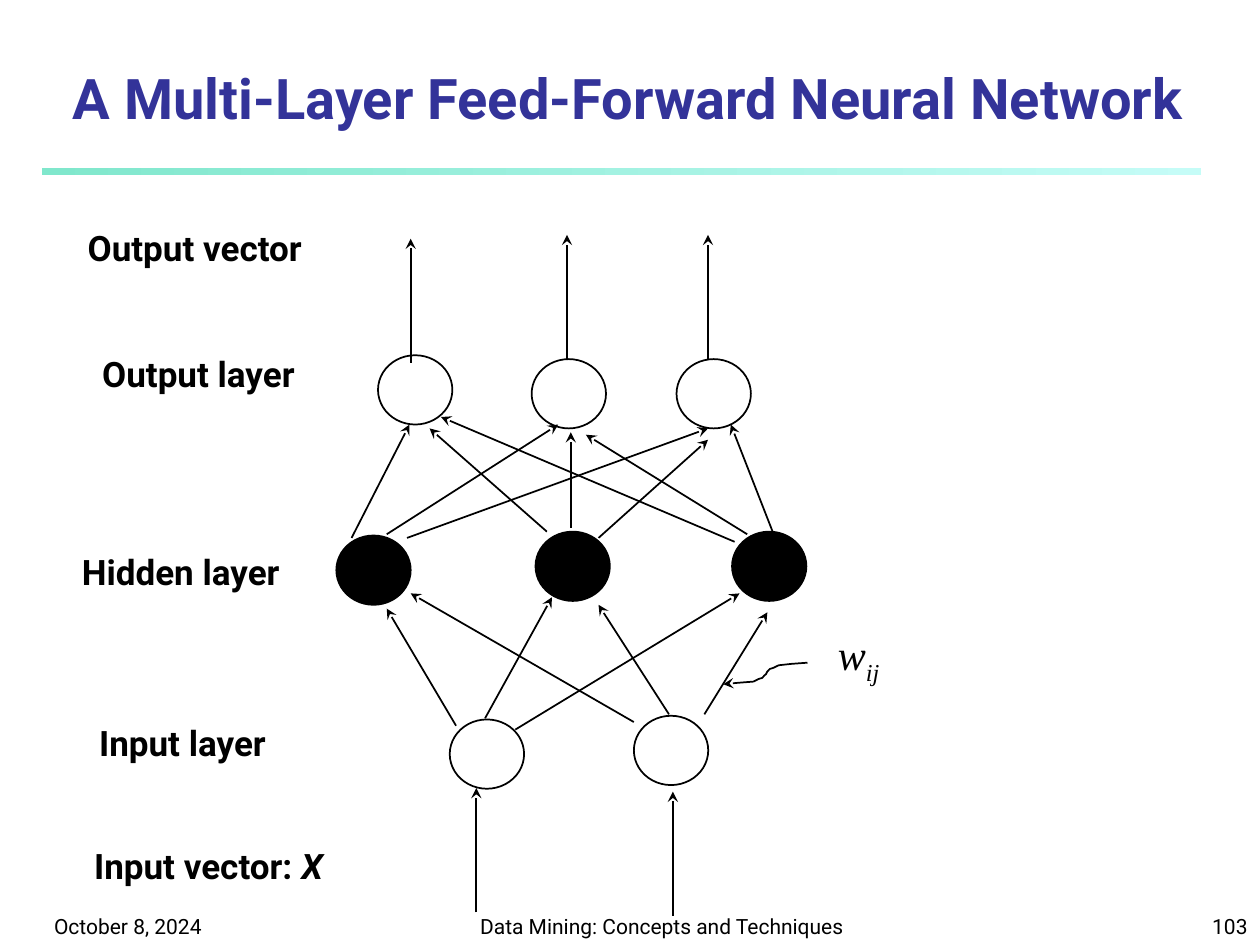
"""Build the multi-layer feed-forward neural network slide."""
import pptx
import pptx.dml.color
import pptx.enum.dml
import pptx.enum.shapes
import pptx.enum.text
import pptx.oxml.ns
import pptx.util
import lxml.etree

Pt = pptx.util.Pt
RGBColor = pptx.dml.color.RGBColor
ALIGN = pptx.enum.text.PP_ALIGN
ANCHOR = pptx.enum.text.MSO_ANCHOR
SHAPE = pptx.enum.shapes.MSO_SHAPE
qn = pptx.oxml.ns.qn

BLACK = RGBColor(0x00, 0x00, 0x00)
INDIGO = RGBColor(0x33, 0x33, 0x99)
MINT = RGBColor(0x80, 0xE7, 0xCC)
PALE_AQUA = RGBColor(0xC5, 0xFC, 0xF7)

NODE_SIZE = (42.5, 39.6)
ARROW_RISE = 71

OUTPUT_NODES = [(216, 203), (303.8, 205.2), (386.6, 205.2)]
HIDDEN_NODES = [(192.2, 306), (306, 303.8), (418.3, 303.8)]
INPUT_NODES = [(257, 411.1), (362.2, 409)]

INPUT_TO_HIDDEN = [
    ((260.6, 414.7), (221, 347.8)),
    ((277.2, 410.4), (315.4, 341.3)),
    ((294.5, 416.9), (422.6, 339.1)),
    ((362.2, 412.6), (234.7, 339.1)),
    ((382.3, 408.2), (342, 345.6)),
    ((402.5, 408.2), (438.5, 349.9)),
]
HIDDEN_TO_OUTPUT = [
    ((200.9, 307.4), (234, 242.6)),
    ((221, 305.3), (319, 242.6)),
    ((232.6, 307.4), (404.6, 244.8)),
    ((419.8, 309.6), (252, 238.3)),
    ((442.1, 305.3), (417.6, 242.6)),
    ((427, 305.3), (334.8, 248.4)),
    ((312.5, 303.8), (245.5, 244.8)),
    ((326.2, 301.7), (326.2, 247)),
    ((342, 307.4), (404.6, 251.3)),
]
VECTOR_STARTS = [(272.2, 521.3), (384.5, 523.4),
                 (234.7, 207.4), (324, 205.2), (404.6, 205.2)]
WEIGHT_CURVE = [
    (461.5, 378.7), (452.2, 379.4), (445, 380.2), (442.1, 381.6),
    (439.9, 382.3), (438.5, 383.8), (437.8, 385.2), (437, 385.9),
    (435.6, 387.4), (433.4, 388.1), (430.6, 389.5), (421.9, 390.2),
    (413.3, 391),
]
LAYER_LABELS = [
    ("Output vector", 34.6, 126, 153.4),
    ("Output layer", 43.2, 198, 140.4),
    ("Hidden layer", 32.4, 311, 141.8),
    ("Input layer", 41, 409, 126.7),
]
FOOTERS = [
    ("October 8, 2024", 23.8, 149.8, ALIGN.LEFT),
    ("Data Mining: Concepts and Techniques", 264.2, 228.2, ALIGN.CENTER),
    ("103", 570.2, 149.8, ALIGN.RIGHT),
]


def add_text(slide, spans, left, top, width, height, size=20, font="Roboto",
             color=BLACK, bold=False, align=ALIGN.CENTER, anchor=ANCHOR.TOP, wrap=False):
    """Add one paragraph made of (text, italic, baseline) spans."""
    box = slide.shapes.add_textbox(Pt(left), Pt(top), Pt(width), Pt(height))
    frame = box.text_frame
    frame.word_wrap = wrap
    frame.vertical_anchor = anchor
    para = frame.paragraphs[0]
    para.alignment = align
    for text, italic, baseline in spans:
        span = para.add_run()
        span.text = text
        span.font.name = font
        span.font.size = Pt(size)
        span.font.bold = bold
        span.font.italic = italic
        span.font.color.rgb = color
        if baseline:
            span.font._element.set("baseline", str(baseline * 1000))


def style_line(line, arrow=False):
    """Make a line thin and black, with an optional stealth arrowhead."""
    line.color.rgb = BLACK
    line.width = Pt(1)
    if arrow:
        outline = line._get_or_add_ln()
        lxml.etree.SubElement(outline, qn("a:tailEnd"), type="stealth")


def add_rule(slide):
    """Add the gradient rule under the title."""
    rule = slide.shapes.add_shape(SHAPE.RECTANGLE, Pt(24), Pt(96), Pt(662.4), Pt(4))
    rule.shadow.inherit = False
    rule.line.fill.background()
    rule.fill.gradient()
    rule.fill.gradient_angle = 0
    for stop, color in zip(rule.fill.gradient_stops, (MINT, PALE_AQUA)):
        stop.color.rgb = color


def add_node(slide, left, top, filled=False):
    """Add one neuron, hollow or black."""
    width, height = NODE_SIZE
    node = slide.shapes.add_shape(SHAPE.OVAL, Pt(left), Pt(top), Pt(width), Pt(height))
    node.shadow.inherit = False
    if filled:
        node.fill.solid()
        node.fill.fore_color.rgb = BLACK
    else:
        node.fill.background()
    style_line(node.line)


def add_arrow(slide, start, end):
    """Add a straight arrow between two points."""
    arrow = slide.shapes.add_connector(
        pptx.enum.shapes.MSO_CONNECTOR.STRAIGHT, *(Pt(value) for value in start + end))
    style_line(arrow.line, arrow=True)
    lxml.etree.SubElement(arrow._element.spPr, qn("a:effectLst"))


def add_curve(slide, points):
    """Add an open curved arrow through the points."""
    start, *rest = [(Pt(x), Pt(y)) for x, y in points]
    builder = slide.shapes.build_freeform(*start)
    builder.add_line_segments(rest, close=False)
    curve = builder.convert_to_shape()
    curve.shadow.inherit = False
    curve.fill.background()
    style_line(curve.line, arrow=True)


def main():
    """Build and save the deck."""
    deck = pptx.Presentation()
    deck.slide_width, deck.slide_height = Pt(720), Pt(540)
    page = deck.slides.add_slide(deck.slide_layouts[6])

    add_rule(page)
    for text, left, width, align in FOOTERS:
        add_text(page, [(text, False, 0)], left, 509.8, width, 30.2, size=12,
                 align=align, anchor=ANCHOR.BOTTOM, wrap=True)
    add_text(page, [("A Multi-Layer Feed-Forward Neural Network ", False, 0)],
             -6, 24, 738, 54, size=32, color=INDIGO, bold=True,
             anchor=ANCHOR.BOTTOM, wrap=True)

    for left, top in OUTPUT_NODES + INPUT_NODES:
        add_node(page, left, top)
    for left, top in HIDDEN_NODES:
        add_node(page, left, top, filled=True)

    for start, end in INPUT_TO_HIDDEN + HIDDEN_TO_OUTPUT:
        add_arrow(page, start, end)
    for x, y in VECTOR_STARTS:
        add_arrow(page, (x, y), (x, y - ARROW_RISE))

    for text, left, top, width in LAYER_LABELS:
        add_text(page, [(text, False, 0)], left, top, width, 31, bold=True)
    add_text(page, [("Input vector: ", False, 0), ("X", True, 0)],
             36, 478.8, 166.3, 31, bold=True)
    add_text(page, [("w", True, 0), ("ij", True, -25)], 470.9, 355.7, 39.6, 36,
             size=24, font="Times New Roman")
    add_curve(page, WEIGHT_CURVE)

    deck.save("out.pptx")


if __name__ == "__main__":
    main()
